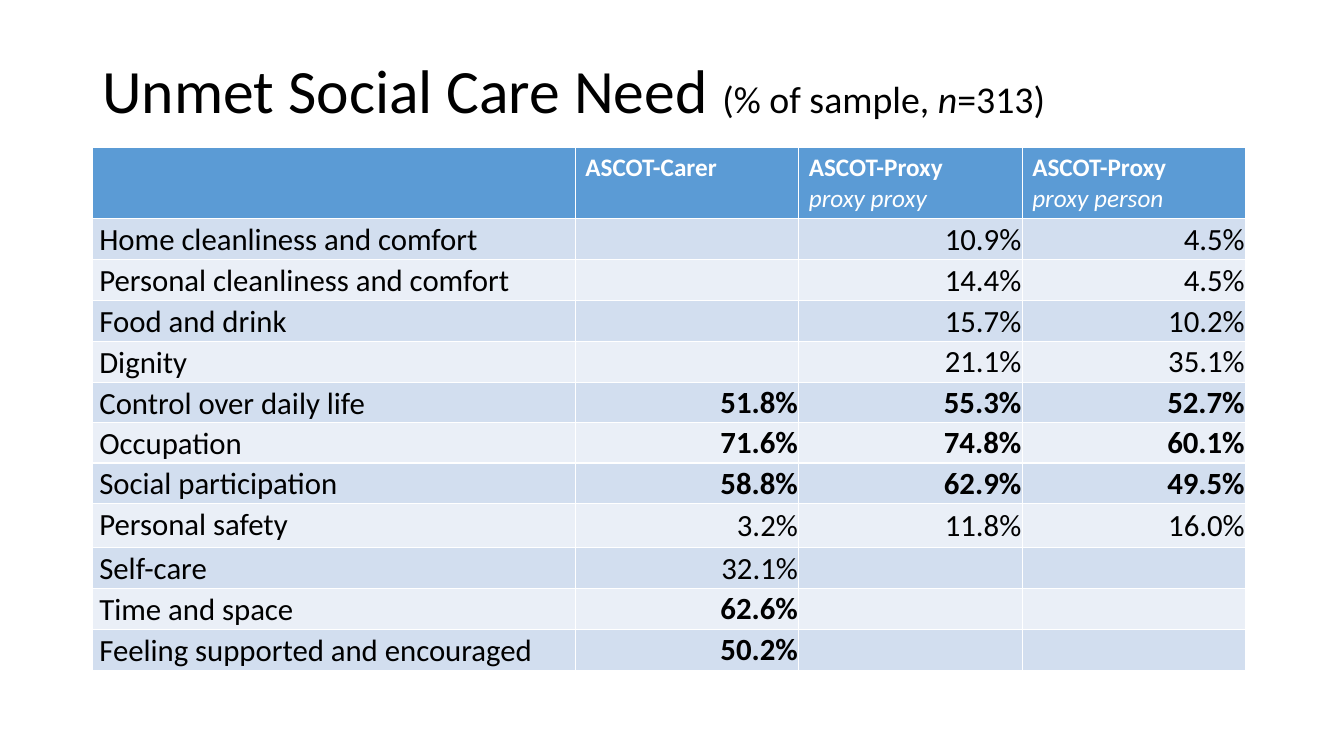
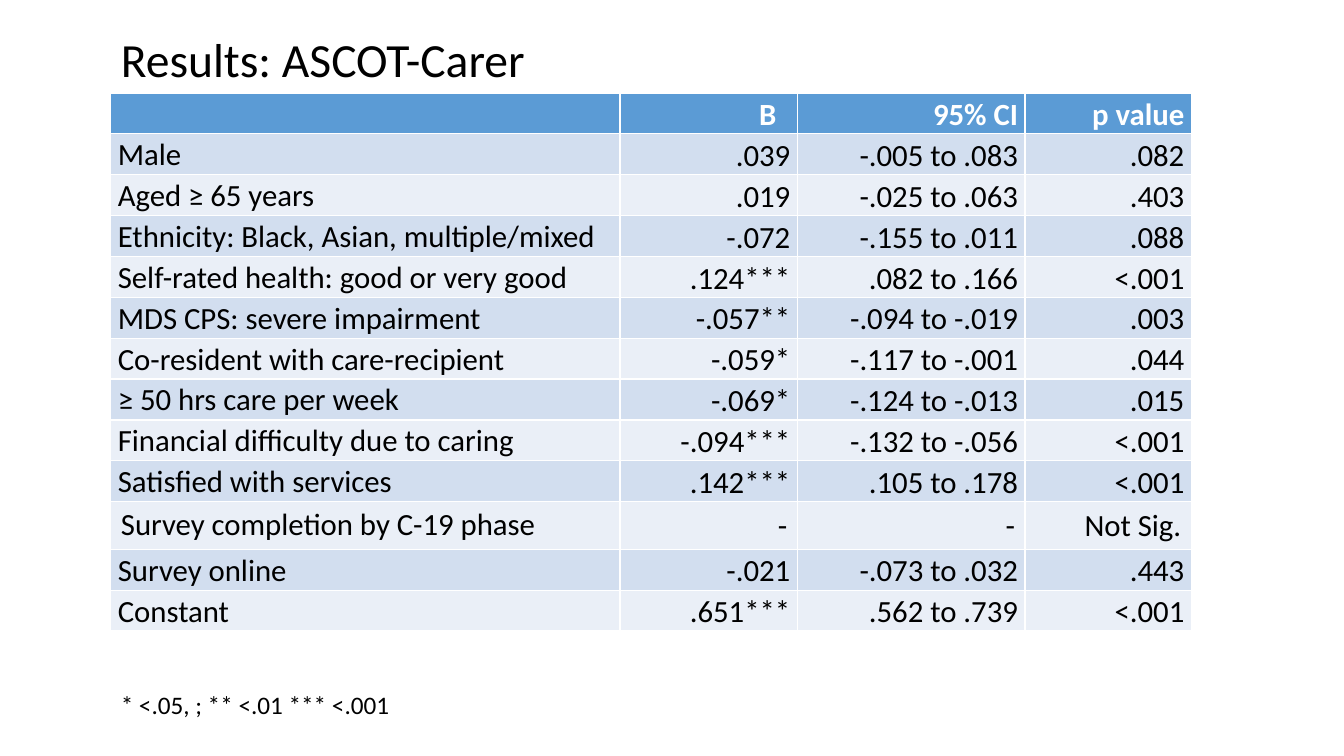
from dataclasses import dataclass

from pptx import Presentation
from pptx.dml.color import RGBColor
from pptx.enum.text import MSO_ANCHOR, MSO_AUTO_SIZE, PP_ALIGN
from pptx.util import Pt

LEFT, RIGHT = PP_ALIGN.LEFT, PP_ALIGN.RIGHT
TOP, MIDDLE, BOTTOM = MSO_ANCHOR.TOP, MSO_ANCHOR.MIDDLE, MSO_ANCHOR.BOTTOM


@dataclass(frozen=True)
class Theme:
    font: str = "Calibri"
    text: RGBColor = RGBColor(0, 0, 0)
    header_text: RGBColor = RGBColor(255, 255, 255)
    header_fill: RGBColor = RGBColor(0x5B, 0x9B, 0xD5)
    bands: tuple = (RGBColor(0xD2, 0xDE, 0xEF), RGBColor(0xEA, 0xEF, 0xF7))
    title_size: Pt = Pt(44)
    subtitle_size: Pt = Pt(27)
    results_title_size: Pt = Pt(34)
    body_size: Pt = Pt(22)
    small_size: Pt = Pt(18)


THEME = Theme()
TITLE = {"size": THEME.title_size}
SUBTITLE = {"size": THEME.subtitle_size}
RESULTS_TITLE = {"size": THEME.results_title_size}
BODY = {"size": THEME.body_size, "bold": False}
BODY_BOLD = BODY | {"bold": True}
SMALL = {"size": THEME.small_size}
HEADER = {"size": THEME.body_size, "color": THEME.header_text, "bold": True}
SMALL_HEADER = HEADER | SMALL
SMALL_HEADER_NOTE = SMALL_HEADER | {"bold": False, "italic": True}

# Cell layouts; margins run left, top, right, bottom in points
PLAIN = {"margins": (7.2, 3.6, 7.2, 3.6), "anchor": TOP, "align": LEFT, "spacing": None}
PLAIN_NUMBER = PLAIN | {"anchor": BOTTOM, "align": RIGHT}
LABEL = PLAIN | {"margins": (5, 0, 5, 0), "spacing": 1.07}
NUMBER = LABEL | {"anchor": BOTTOM, "align": RIGHT}
COLUMN_HEAD = NUMBER | {"anchor": MIDDLE}
INSET_COLUMN_HEAD = COLUMN_HEAD | {"margins": (5, 0, 15, 0)}
PERCENT = {"margins": (0.7, 0.7, 0.7, 0), "anchor": MIDDLE, "align": RIGHT, "spacing": None}

BOLD_FROM = 49  # percentages from here up are emphasised
NEEDS = [
    ("Home cleanliness and comfort", None, 10.9, 4.5),
    ("Personal cleanliness and comfort", None, 14.4, 4.5),
    ("Food and drink", None, 15.7, 10.2),
    ("Dignity", None, 21.1, 35.1),
    ("Control over daily life", 51.8, 55.3, 52.7),
    ("Occupation", 71.6, 74.8, 60.1),
    ("Social participation", 58.8, 62.9, 49.5),
    ("Personal safety", 3.2, 11.8, 16.0),
    ("Self-care", 32.1, None, None),
    ("Time and space", 62.6, None, None),
    ("Feeling supported and encouraged", 50.2, None, None),
]
PHASE_LABEL = "Survey completion by C-19 phase"
RESULTS = [
    ("Male", ".039", "-.005 to .083", ".082"),
    ("Aged ≥ 65 years", ".019", "-.025 to .063", ".403"),
    ("Ethnicity: Black, Asian, multiple/mixed", "-.072", "-.155 to .011", ".088"),
    ("Self-rated health: good or very good", ".124***", ".082 to .166", "<.001"),
    ("MDS CPS: severe impairment", "-.057**", "-.094 to -.019", ".003"),
    ("Co-resident with care-recipient", "-.059*", "-.117 to -.001", ".044"),
    ("≥ 50 hrs care per week", "-.069*", "-.124 to -.013", ".015"),
    ("Financial difficulty due to caring", "-.094***", "-.132 to -.056", "<.001"),
    ("Satisfied with services", ".142***", ".105 to .178", "<.001"),
    (PHASE_LABEL, "-", "-", "Not Sig."),
    ("Survey online", "-.021", "-.073 to .032", ".443"),
    ("Constant", ".651***", ".562 to .739", "<.001"),
]

# Each table row is a list of (lines, layout); a line is a list of (text, format)
need_rows = [[
    ([], PLAIN),
    ([[("ASCOT-Carer", SMALL_HEADER)]], PLAIN),
    *(([[("ASCOT-Proxy", SMALL_HEADER)], [(view, SMALL_HEADER_NOTE)]], PLAIN)
      for view in ("proxy proxy", "proxy person")),
]]
for label, *shares in NEEDS:
    row = [([[(label, BODY)]], LABEL)]
    for share in shares:
        if share is None:
            row.append(([], PLAIN))
        else:
            style = BODY_BOLD if share >= BOLD_FROM else BODY
            row.append(([[(f"{share:.1f}%", style)]], PERCENT))
    need_rows.append(row)

result_rows = [[
    ([], PLAIN),
    ([[("B", HEADER)]], INSET_COLUMN_HEAD),
    ([[("95% CI", HEADER)]], COLUMN_HEAD),
    ([[("p value", HEADER)]], COLUMN_HEAD),
]]
for label, *values in RESULTS:
    is_phase = label == PHASE_LABEL
    label_layout, value_layout = (PLAIN, PLAIN_NUMBER) if is_phase else (LABEL, NUMBER)
    result_rows.append([([[(label, BODY)]], label_layout)]
                       + [([[(value, BODY)]], value_layout) for value in values])

PAGES = [
    {
        "title": [("Unmet Social Care Need ", TITLE), ("(% of sample, ", SUBTITLE),
                  ("n", SUBTITLE | {"italic": True}), ("=313)", SUBTITLE)],
        "title_box": (66, 28.75, 828, 76.3),
        "title_anchor": MIDDLE,
        "title_spacing": 0.9,
        "table_at": (66, 105.2),
        "columns": (345, 159.6, 159.6, 159.6),
        "heights": [51] + [28.8] * 7 + [31.6] + [28.8] * 3,
        "rows": need_rows,
    },
    {
        "title": [("Results: ASCOT-Carer", RESULTS_TITLE)],
        "title_box": (79.2, 18, 336, 48),
        "title_anchor": TOP,
        "title_spacing": None,
        "table_at": (79.2, 66.4),
        "columns": (363.6, 126.7, 162.7, 118.8),
        "heights": [29.2] * 10 + [34] + [29.2] * 2,
        "rows": result_rows,
        "footnote": "* <.05, ; ** <.01 *** <.001",
        "footnote_box": (79.2, 489, 374, 51),
    },
]


def write(para, spans, align=LEFT, spacing=None):
    """Add formatted (text, format) spans to a paragraph."""
    para.alignment = align
    para.line_spacing = spacing
    for text, style in spans:
        span = para.add_run()
        span.text = text
        span.font.name = THEME.font
        span.font.color.rgb = style.get("color", THEME.text)
        for name in ("size", "bold", "italic"):
            if name in style:
                setattr(span.font, name, style[name])


def fill_cell(cell, lines, layout, color):
    cell.fill.solid()
    cell.fill.fore_color.rgb = color
    cell.vertical_anchor = layout["anchor"]
    for side, margin in zip(("left", "top", "right", "bottom"), layout["margins"]):
        setattr(cell, f"margin_{side}", Pt(margin))
    frame = cell.text_frame
    for index, spans in enumerate(lines):
        para = frame.add_paragraph() if index else frame.paragraphs[0]
        write(para, spans, layout["align"], layout["spacing"])


deck = Presentation()
deck.slide_width, deck.slide_height = Pt(960), Pt(540)
title_only = deck.slide_layouts.get_by_name("Title Only")

for content in PAGES:
    page = deck.slides.add_slide(title_only)

    title = page.shapes.title
    for name, length in zip(("left", "top", "width", "height"), content["title_box"]):
        setattr(title, name, Pt(length))
    frame = title.text_frame
    frame.auto_size = MSO_AUTO_SIZE.NONE
    frame.vertical_anchor = content["title_anchor"]
    write(frame.paragraphs[0], content["title"], spacing=content["title_spacing"])

    rows, columns, heights = content["rows"], content["columns"], content["heights"]
    box = [Pt(length) for length in (*content["table_at"], sum(columns), sum(heights))]
    table = page.shapes.add_table(len(rows), len(columns), *box).table
    for column, width in zip(table.columns, columns):
        column.width = Pt(width)
    for row_index, (row, height) in enumerate(zip(rows, heights)):
        table.rows[row_index].height = Pt(height)
        color = THEME.bands[(row_index - 1) % 2] if row_index else THEME.header_fill
        for column_index, (lines, layout) in enumerate(row):
            fill_cell(table.cell(row_index, column_index), lines, layout, color)

    if "footnote" in content:
        box = page.shapes.add_textbox(*(Pt(length) for length in content["footnote_box"]))
        box.text_frame.word_wrap = True
        write(box.text_frame.paragraphs[0], [(content["footnote"], SMALL)])

deck.save("out.pptx")
